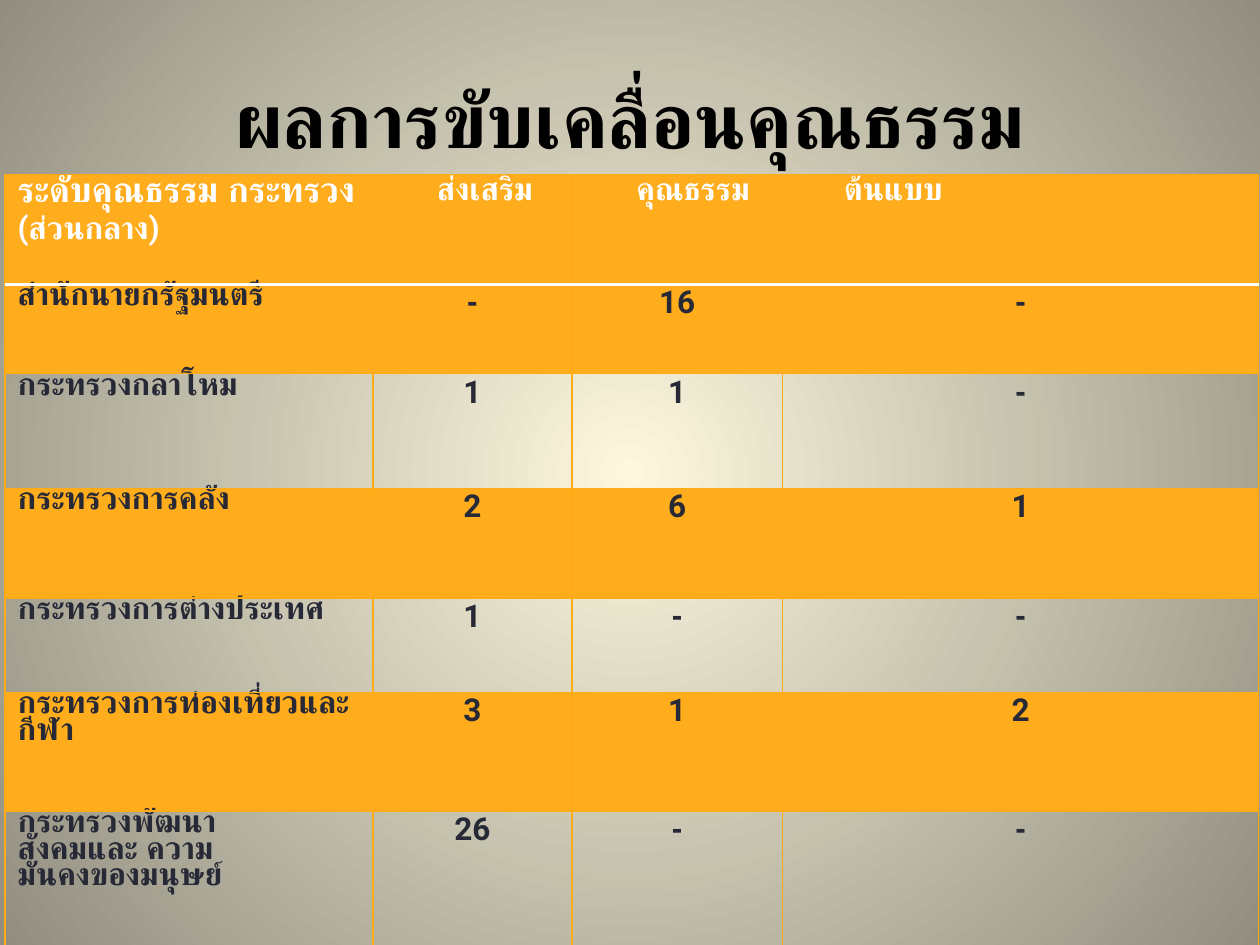
from lxml.etree import SubElement, fromstring
from pptx import Presentation
from pptx.dml.color import RGBColor
from pptx.enum.text import MSO_ANCHOR, PP_ALIGN
from pptx.oxml.ns import qn
from pptx.util import Inches, Pt

COLOURS = {"title": "000000", "header": "FFFFFF", "body": "272A36", "band": "FFAC1D",
           "border": "FFAB16", "centre": "FCF7DD", "edge": "918E81"}
COLUMNS = [2.92, 1.58, 1.67, 3.78]
ROWS = [0.87, 0.71, 0.91, 0.87, 0.75, 0.94, 1.93]
HEADER = [[("ระดับคุณธรรม กระทรวง ", 20), ("(ส่วนกลาง)", 18)],
          [("ส่งเสริม", 18)], [("คุณธรรม", 18)], [("ต้นแบบ", 18)]]
HEADER_INDENTS = [0.1, 0.51, 0.51, 0.49]
MINISTRIES = [
    ("สำนักนายกรัฐมนตรี", "-", "16", "-"),
    ("กระทรวงกลาโหม", "1", "1", "-"),
    ("กระทรวงการคลัง", "2", "6", "1"),
    ("กระทรวงการต่างประเทศ", "1", "-", "-"),
    ("กระทรวงการท่องเที่ยวและกีฬา", "3", "1", "2"),
    ("กระทรวงพัฒนาสังคมและ ความมั่นคงของมนุษย์", "26", "-", "-"),
]
LAST = len(MINISTRIES)


class SlideBuilder:
    def __init__(self, deck):
        self.width, self.height = deck.slide_width, deck.slide_height
        self.page = deck.slides.add_slide(deck.slide_layouts[5])

    def background(self):
        namespace = "http://schemas.openxmlformats.org/drawingml/2006/main"
        stops = "".join(
            f'<a:gs pos="{position}"><a:srgbClr val="{COLOURS[name]}"/></a:gs>'
            for position, name in ((0, "centre"), (100000, "edge")))
        gradient = fromstring(
            f'<a:gradFill xmlns:a="{namespace}" rotWithShape="1"><a:gsLst>{stops}</a:gsLst>'
            '<a:path path="circle"><a:fillToRect l="50000" t="50000" r="50000" b="50000"/>'
            '</a:path></a:gradFill>')
        fill = self.page.background.fill
        fill.solid()
        properties = self.page.element.find(".//" + qn("p:bgPr"))
        properties.replace(properties[0], gradient)

    def span(self, para, text, size, colour, font):
        span = para.add_run()
        span.text = text
        span.font.name, span.font.size, span.font.bold = font, Pt(size), True
        span.font.color.rgb = RGBColor.from_string(COLOURS[colour])

    def title(self, text, left, top, width, height):
        box = self.page.shapes.title
        box.left, box.top = int(self.width * left), int(self.height * top)
        box.width, box.height = int(self.width * width), int(self.height * height)
        box.text_frame.vertical_anchor = MSO_ANCHOR.MIDDLE
        para = box.text_frame.paragraphs[0]
        para.alignment = PP_ALIGN.CENTER
        self.span(para, text, 44, "title", "Calibri")

    def table(self, left, top, columns, rows):
        frame = self.page.shapes.add_table(
            len(rows), len(columns), int(self.width * left), int(self.height * top),
            Inches(sum(columns)), Inches(sum(rows)))
        table = frame.table
        table.first_row = table.horz_banding = False
        for column, width in zip(table.columns, columns):
            column.width = Inches(width)
        for row, height in zip(table.rows, rows):
            row.height = Inches(height)
        return table

    def borders(self, cell, **white):
        properties = cell._tc.get_or_add_tcPr()
        for side in "LRTB":
            colour, weight = ("header", 2) if white.get(side) else ("border", 0.75)
            line = SubElement(properties, qn("a:ln" + side), w=str(Pt(weight)))
            fill = SubElement(line, qn("a:solidFill"))
            SubElement(fill, qn("a:srgbClr"), val=COLOURS[colour])

    def cell(self, cell, spans, colour, banded, indent=0, right=0, spacing=1, centred=False):
        cell.margin_top = cell.margin_bottom = 0
        cell.margin_left, cell.margin_right = Inches(indent), Inches(right)
        if banded:
            cell.fill.solid()
            cell.fill.fore_color.rgb = RGBColor.from_string(COLOURS["band"])
        else:
            cell.fill.background()
        para = cell.text_frame.paragraphs[0]
        para.alignment = PP_ALIGN.CENTER if centred else PP_ALIGN.LEFT
        para.line_spacing = spacing
        for text, size in spans:
            self.span(para, text, size, colour, "Arial" if text == "-" else "Roboto")


def main():
    deck = Presentation()
    deck.slide_width, deck.slide_height = Inches(10), Inches(7.5)
    builder = SlideBuilder(deck)
    builder.background()
    builder.title("ผลการขับเคลื่อนคุณธรรม", 0.05, 0.04, 0.9, 0.17)
    table = builder.table(0.004, 0.185, COLUMNS, ROWS)
    for column, (spans, indent) in enumerate(zip(HEADER, HEADER_INDENTS)):
        cell = table.cell(0, column)
        builder.borders(cell, B=True)
        builder.cell(cell, spans, "header", True, indent)
    for row, values in enumerate(MINISTRIES, start=1):
        for column, value in enumerate(values):
            cell = table.cell(row, column)
            builder.borders(cell, T=row == 1)
            name = column == 0
            builder.cell(cell, [(value, 18)], "body", row % 2 == 1,
                         indent=0.1 if name else 0,
                         right=1 if name and row == LAST else 0,
                         spacing=0.85 if name else 1, centred=not name)
    deck.save("out.pptx")


if __name__ == "__main__":
    main()
